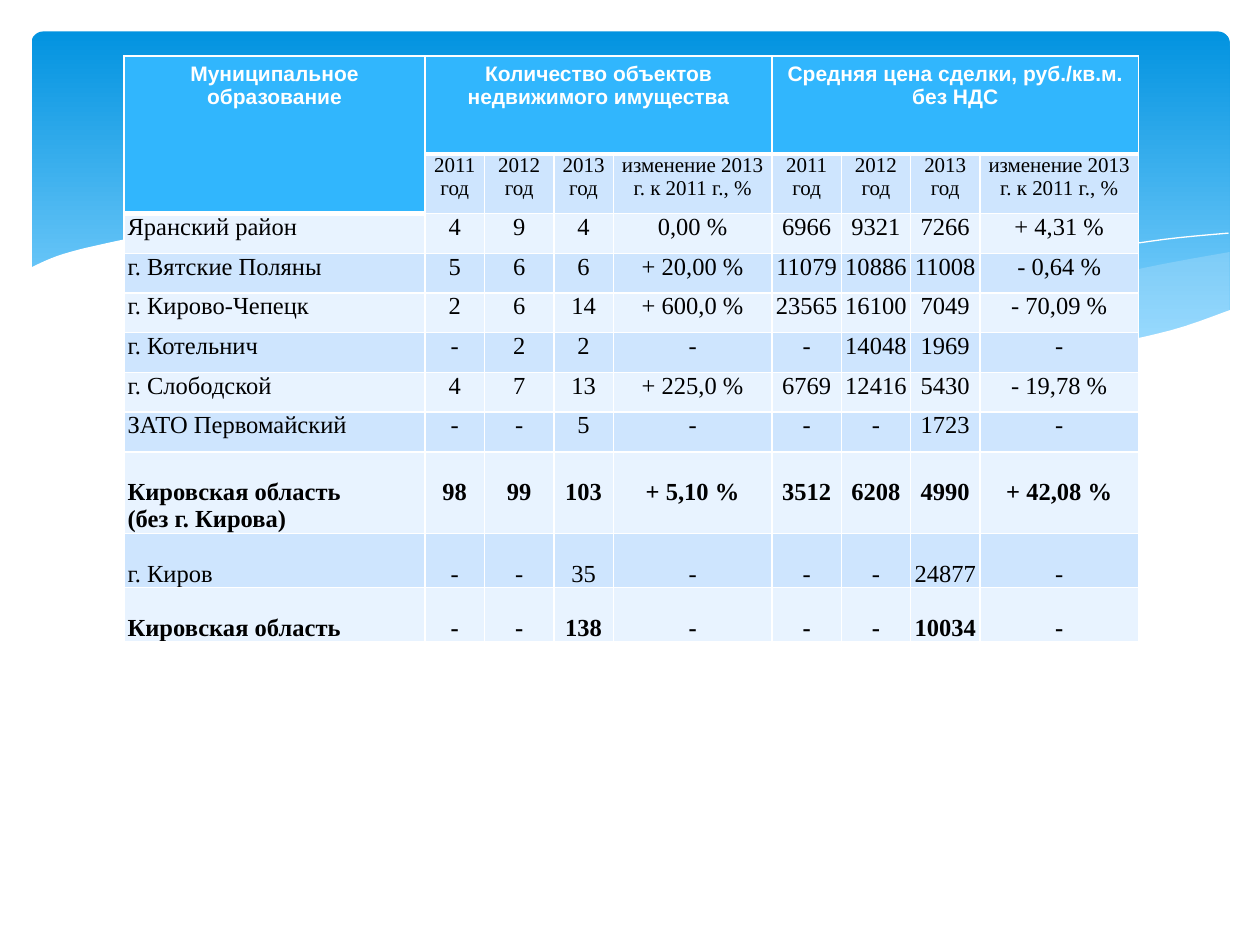
from lxml.etree import SubElement
from pptx import Presentation
from pptx.dml.color import RGBColor
from pptx.enum.shapes import MSO_SHAPE
from pptx.enum.text import PP_ALIGN
from pptx.oxml import parse_xml
from pptx.oxml.ns import nsdecls, qn
from pptx.util import Pt

COLORS = {"white": "FFFFFF", "black": "000000", "top": "0293E0", "low": "83D3FE",
          "mist": "C6E7FC", "head": "31B6FD", "dark": "CEE5FE", "light": "E8F3FF"}

# Wave outlines in points; each list is one smooth stretch.
RIGHT_WAVE = [
    [(702.7, 144), (663, 151.2), (620, 160.6), (561, 174.2), (508.3, 185), (476, 190.8)],
    [(476, 190.8), (517.7, 195.8), (553.7, 199.4), (586, 200.2), (621.4, 198),
     (657.4, 192.2), (683.3, 185), (702.7, 177.8)]]
MID_WAVE = [
    [(643, 196.6), (581, 187.2), (508.3, 172.8), (453, 159.8), (389.5, 146.2),
     (334.8, 137.5), (273.6, 133.2), (206, 137.5)],
    [(206, 137.5), (260.6, 146.2), (323.3, 159.8), (407.5, 178.6), (478.8, 191.5),
     (538.6, 198.7), (589, 200.2), (643, 196.6)]]
LONG_LINE = [[(222.5, 140.4), (261.4, 136), (311.8, 134.6), (367.2, 138.2),
              (437.8, 147), (500.4, 157.7), (572.4, 173.5), (653, 195.8)]]
SHORT_LINE = [[(441.4, 185), (500.4, 169.2), (558.7, 155.5), (623.5, 143.3),
               (665.3, 136.8), (702, 133.2)]]
WHITE_WAVE = [
    [(703.4, 177), (669.6, 188.6), (630, 196.6), (582.5, 199.4), (522.7, 195.8),
     (450.7, 185.8), (381, 172), (321.8, 158.4), (244.8, 141.8), (180, 134),
     (127.4, 132.5), (85.7, 134.6), (54.7, 140.4), (33, 146.2), (16.6, 153.4)],
    [(16.6, 153.4), (16.6, 237)], [(16.6, 237), (703.4, 237)]]

YEARS = ["2011 год", "2012 год", "2013 год", "изменение 2013 г. к 2011 г., %"]
HEADS = {0: "Муниципальное образование",
         1: "Количество объектов недвижимого имущества",
         5: "Средняя цена сделки, руб./кв.м. без НДС"}
ROWS = [
    ["Яранский район", "4", "9", "4", "0,00 %", "6966", "9321", "7266", "+ 4,31 %"],
    ["г. Вятские Поляны", "5", "6", "6", "+ 20,00 %", "11079", "10886", "11008", "- 0,64 %"],
    ["г. Кирово-Чепецк", "2", "6", "14", "+ 600,0 %", "23565", "16100", "7049", "- 70,09 %"],
    ["г. Котельнич", "-", "2", "2", "-", "-", "14048", "1969", "-"],
    ["г. Слободской", "4", "7", "13", "+ 225,0 %", "6769", "12416", "5430", "- 19,78 %"],
    ["ЗАТО Первомайский", "-", "-", "5", "-", "-", "-", "1723", "-"],
    ["Кировская область\n(без г. Кирова)", "98", "99", "103", "+ 5,10 %",
     "3512", "6208", "4990", "+ 42,08 %"],
    ["г. Киров", "-", "-", "35", "-", "-", "-", "24877", "-"],
    ["Кировская область", "-", "-", "138", "-", "-", "-", "10034", "-"]]
WIDTHS = [172, 34, 39.6, 34, 90.7, 39.6, 39.6, 39.6, 90.7]
HEIGHTS = [56, 33.7] + [22.7] * 6 + [46.6, 30.9, 30.9]
BOLD_ROWS = (8, 10)
TOTALS = 8  # first of the rows whose text starts one line lower


def color(name):
    return RGBColor.from_string(COLORS[name])


def smooth(knots, steps=5):
    """Points of a Catmull-Rom curve through the knots, without the first."""
    if len(knots) == 2:
        return knots[1:]
    ends = [knots[0]] + knots + [knots[-1]]
    curve = []
    for a, b, c, d in zip(ends, ends[1:], ends[2:], ends[3:]):
        for step in range(1, steps + 1):
            t = step / steps
            curve.append(tuple(
                q + t / 2 * (r - p + t * (2 * p - 5 * q + 4 * r - s
                                          + t * (3 * (q - r) + s - p)))
                for p, q, r, s in zip(a, b, c, d)))
    return curve


class Painter:
    """Holds the text style and the slide being drawn."""
    head_font, body_font = "Arial", "Times New Roman"
    small, large = 12, 14

    def __init__(self, slide):
        self.slide = slide

    def panel(self, left, top, width, height):
        shape = self.slide.shapes.add_shape(
            MSO_SHAPE.ROUNDED_RECTANGLE, Pt(left), Pt(top), Pt(width), Pt(height))
        shape.adjustments[0] = 0.034
        shape.shadow.inherit = False
        shape.line.fill.background()
        shape.fill.gradient()
        shape.fill.gradient_angle = 270
        for stop, place, name in zip(shape.fill.gradient_stops, (0, 0.9), ("top", "low")):
            stop.position = place
            stop.color.rgb = color(name)

    def curve(self, parts, closed):
        start = parts[0][0]
        points = [point for part in parts for point in smooth(part)]
        build = self.slide.shapes.build_freeform(Pt(start[0]), Pt(start[1]))
        build.add_line_segments([(Pt(x), Pt(y)) for x, y in points], close=closed)
        shape = build.convert_to_shape()
        shape.shadow.inherit = False
        return shape

    def wave(self, parts, name, alpha=100):
        shape = self.curve(parts, True)
        shape.line.fill.background()
        shape.fill.solid()
        shape.fill.fore_color.rgb = color(name)
        if alpha < 100:
            tint = shape.fill._xPr.find(".//" + qn("a:srgbClr"))
            SubElement(tint, qn("a:alpha")).set("val", str(alpha * 1000))

    def line(self, parts):
        shape = self.curve(parts, False)
        shape.fill.background()
        shape.line.color.rgb = color("white")
        shape.line.width = Pt(0)

    def cell(self, cell, row, col):
        head = row == 0 or (row == 1 and col == 0)
        cell.fill.solid()
        cell.fill.fore_color.rgb = color("head" if head else "dark" if row % 2 else "light")
        below = row == 1 or (row == 2 and col == 0)
        self.border(cell, top=3 if below and not head else 1, bottom=3 if head else 1)
        if not head:
            cell.margin_left = cell.margin_right = Pt(2)
            cell.margin_top = Pt(15.5 if row >= TOTALS else 0)
            cell.margin_bottom = 0
        for para in cell.text_frame.paragraphs:
            para.alignment = PP_ALIGN.CENTER if head or col else PP_ALIGN.LEFT
            for run in para.runs:
                run.font.name = self.head_font if head else self.body_font
                run.font.size = Pt(self.small if row < 2 else self.large)
                run.font.bold = head or row in BOLD_ROWS
                run.font.color.rgb = color("white" if head else "black")

    def border(self, cell, top, bottom):
        props = cell._tc.get_or_add_tcPr()
        sides = (("L", 1), ("R", 1), ("T", top), ("B", bottom))
        for index, (side, width) in enumerate(sides):
            props.insert(index, parse_xml(
                f'<a:ln{side} {nsdecls("a")} w="{Pt(width)}"><a:solidFill>'
                f'<a:srgbClr val="{COLORS["white"]}"/></a:solidFill></a:ln{side}>'))

    def table(self, left, top):
        table = self.slide.shapes.add_table(
            len(HEIGHTS), len(WIDTHS), Pt(left), Pt(top),
            Pt(sum(WIDTHS)), Pt(sum(HEIGHTS))).table
        for column, width in zip(table.columns, WIDTHS):
            column.width = Pt(width)
        for row, height in zip(table.rows, HEIGHTS):
            row.height = Pt(height)
        heads = [HEADS.get(col, "") for col in range(len(WIDTHS))]
        for row, texts in enumerate([heads, [""] + YEARS * 2] + ROWS):
            for col, text in enumerate(texts):
                cell = table.cell(row, col)
                cell.text_frame.text = text
                self.cell(cell, row, col)
        table.cell(0, 0).merge(table.cell(1, 0))
        for first in (1, 5):
            table.cell(0, first).merge(table.cell(0, first + 3))


def main():
    deck = Presentation()
    deck.slide_width, deck.slide_height = Pt(720), Pt(540)
    paint = Painter(deck.slides.add_slide(deck.slide_layouts[6]))
    paint.panel(18, 18, 684.7, 194.4)
    paint.wave(RIGHT_WAVE, "mist", 29)
    paint.wave(MID_WAVE, "mist", 40)
    paint.line(LONG_LINE)
    paint.line(SHORT_LINE)
    paint.wave(WHITE_WAVE, "white")
    paint.table(70.9, 32)
    deck.save("out.pptx")


if __name__ == "__main__":
    main()
